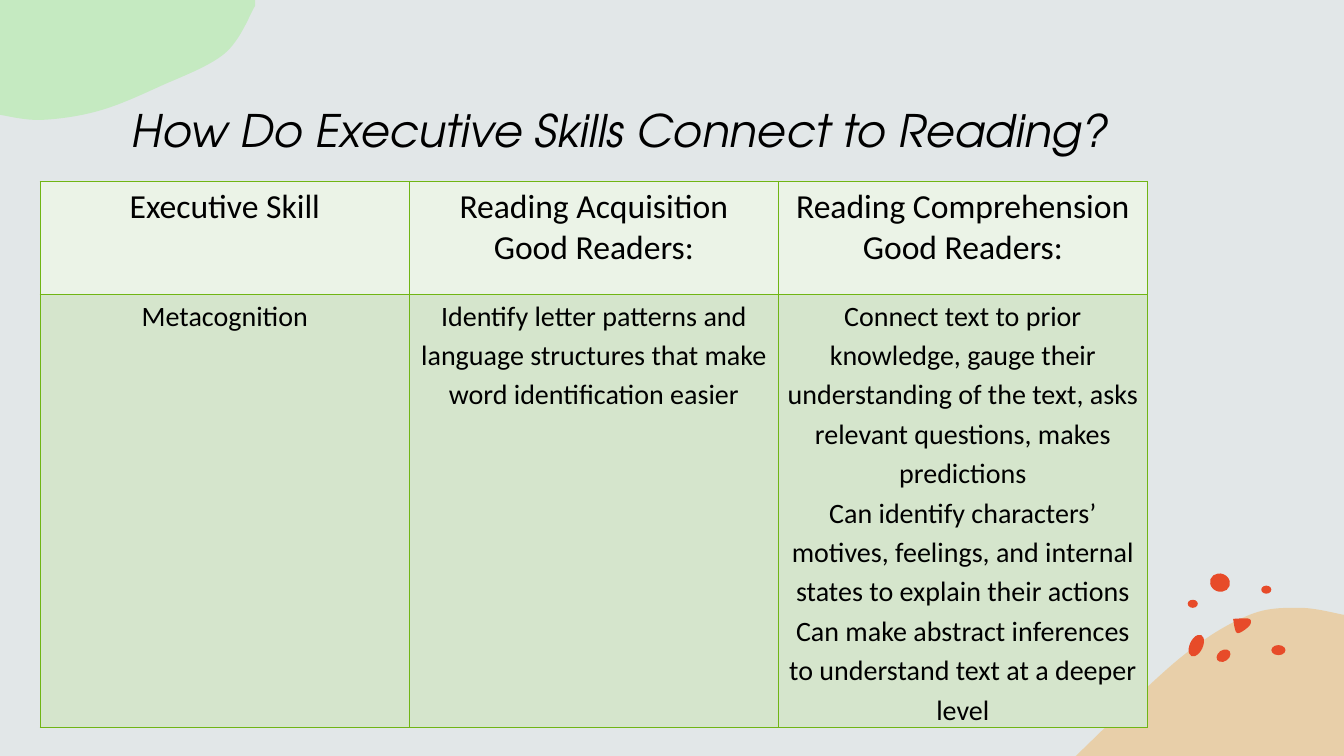
"""Build a slide on how executive skills connect to reading."""
from dataclasses import dataclass

import lxml.etree
import pptx
import pptx.dml.color
import pptx.dml.fill
import pptx.enum.shapes
import pptx.enum.text
import pptx.oxml
import pptx.oxml.ns
import pptx.slide
import pptx.table
import pptx.text.text
import pptx.util
from pptx.util import Inches

Point = tuple[float, float]
CURVE_STEPS = 16
RED = "E74B29"
BORDER = "70B514"


@dataclass
class Blob:
    """A smooth curve through its points, closed by way of straight corners."""
    curve: list[Point]
    corners: list[Point]
    color: str
    opacity: int = 100


@dataclass
class Spot:
    """A small red oval."""
    left: float
    top: float
    width: float
    height: float
    rotation: float = 0


@dataclass
class TableRow:
    """A table row whose cells are lists of paragraphs."""
    height: float
    fill: str
    size: int
    line_spacing: float
    margin_x: float
    margin_y: float
    cells: list[list[str]]


BLOBS = [
    Blob([(10.67, 7.5), (11.69, 6.54), (12.37, 6.11), (12.88, 6.03), (13.33, 6.1)],
         [(13.33, 7.5)], "EFB96B", 50),
    Blob([(2.53, 0.06), (2.23, 0.53), (1.58, 0.86), (0.98, 1.1), (0.41, 1.19), (0, 1.14)],
         [(0, 0), (2.53, 0)], "A9ED9C", 50),
    Blob([(12.23, 6.14), (12.39, 6.14), (12.39, 6.21), (12.27, 6.28), (12.23, 6.14)], [], RED),
]

SPOTS = [
    Spot(12.06, 6.45, 0.15, 0.11, -35),
    Spot(11.8, 6.29, 0.13, 0.23, 25),
    Spot(12.61, 6.4, 0.14, 0.1),
    Spot(12, 5.69, 0.2, 0.18, 20),
    Spot(12.51, 5.81, 0.1, 0.08),
    Spot(11.78, 5.95, 0.1, 0.08),
]

ROWS = [
    TableRow(1.12, "EBF3E7", 24, 1, 0.1, 0.05, [
        ["Executive Skill"],
        ["Reading Acquisition", "Good Readers:"],
        ["Reading Comprehension", "Good Readers:"]]),
    TableRow(4.3, "D5E5CC", 20, 1.15, 0.07, 0, [
        ["Metacognition"],
        ["Identify letter patterns and language structures that make word identification easier"],
        ["Connect text to prior knowledge, gauge their understanding of the text, asks relevant "
         "questions, makes predictions",
         "Can identify characters’ motives, feelings, and internal states to explain their actions",
         "Can make abstract inferences to understand text at a deeper level"]]),
]


def set_fill(fill: pptx.dml.fill.FillFormat, color: str) -> None:
    fill.solid()
    fill.fore_color.rgb = pptx.dml.color.RGBColor.from_string(color)


def write_text(frame: pptx.text.text.TextFrame, paragraphs: list[str], *, size: int,
               font: str = "Calibri", italic: bool = False, line_spacing: float = 1) -> None:
    frame.word_wrap = True
    for index, text in enumerate(paragraphs):
        paragraph = frame.add_paragraph() if index else frame.paragraphs[0]
        paragraph.alignment = pptx.enum.text.PP_ALIGN.CENTER
        paragraph.line_spacing = line_spacing
        run = paragraph.add_run()
        run.text = text
        run.font.name = font
        run.font.size = pptx.util.Pt(size)
        run.font.italic = italic
        set_fill(run.font.fill, "000000")


def smooth(points: list[Point]) -> list[Point]:
    padded = [points[0], *points, points[-1]]
    curve = [points[0]]
    for before, start, end, after in zip(padded, padded[1:], padded[2:], padded[3:]):
        for step in range(1, CURVE_STEPS + 1):
            t = step / CURVE_STEPS
            curve.append(tuple(
                b + t / 2 * (c - a + t * (2 * a - 5 * b + 4 * c - d + t * (3 * (b - c) + d - a)))
                for a, b, c, d in zip(before, start, end, after)))
    return curve


def draw_blob(slide: pptx.slide.Slide, blob: Blob) -> None:
    outline = [(Inches(x), Inches(y)) for x, y in smooth(blob.curve) + blob.corners]
    builder = slide.shapes.build_freeform(*outline[0], scale=1.0)
    builder.add_line_segments(outline[1:], close=True)
    shape = builder.convert_to_shape()
    shape.shadow.inherit = False
    shape.line.fill.background()
    set_fill(shape.fill, blob.color)
    if blob.opacity < 100:
        color = shape.fill._xPr.find(".//" + pptx.oxml.ns.qn("a:srgbClr"))
        lxml.etree.SubElement(color, pptx.oxml.ns.qn("a:alpha"), val=str(blob.opacity * 1000))


def draw_spot(slide: pptx.slide.Slide, spot: Spot) -> None:
    shape = slide.shapes.add_shape(pptx.enum.shapes.MSO_SHAPE.OVAL, Inches(spot.left),
                                   Inches(spot.top), Inches(spot.width), Inches(spot.height))
    shape.rotation = spot.rotation
    shape.shadow.inherit = False
    shape.line.fill.background()
    set_fill(shape.fill, RED)


def set_borders(cell: pptx.table._Cell) -> None:
    properties = cell._tc.get_or_add_tcPr()
    for index, side in enumerate(("lnL", "lnR", "lnT", "lnB")):
        properties.insert(index, pptx.oxml.parse_xml(
            f'<a:{side} {pptx.oxml.ns.nsdecls("a")} w="12700"><a:solidFill>'
            f'<a:srgbClr val="{BORDER}"/></a:solidFill></a:{side}>'))


def draw_table(slide: pptx.slide.Slide, rows: list[TableRow]) -> None:
    height = sum(row.height for row in rows)
    table = slide.shapes.add_table(len(rows), len(rows[0].cells), Inches(0.4), Inches(1.8),
                                   Inches(10.98), Inches(height)).table
    table.first_row = table.horz_banding = False
    for row_index, row in enumerate(rows):
        table.rows[row_index].height = Inches(row.height)
        for column_index, paragraphs in enumerate(row.cells):
            cell = table.cell(row_index, column_index)
            cell.margin_left = cell.margin_right = Inches(row.margin_x)
            cell.margin_top = cell.margin_bottom = Inches(row.margin_y)
            set_fill(cell.fill, row.fill)
            set_borders(cell)
            write_text(cell.text_frame, paragraphs, size=row.size, line_spacing=row.line_spacing)


def main() -> None:
    presentation = pptx.Presentation()
    presentation.slide_width = Inches(13.33)
    presentation.slide_height = Inches(7.5)
    slide = presentation.slides.add_slide(presentation.slide_layouts[6])
    set_fill(slide.background.fill, "E2E7E8")
    for blob in BLOBS:
        draw_blob(slide, blob)
    for spot in SPOTS:
        draw_spot(slide, spot)
    title = slide.shapes.add_textbox(Inches(0.71), Inches(0.65), Inches(10.89), Inches(0.95))
    title.text_frame.vertical_anchor = pptx.enum.text.MSO_ANCHOR.BOTTOM
    write_text(title.text_frame, ["How Do Executive Skills Connect to Reading?"],
               size=32, font="TeX Gyre Adventor", italic=True)
    draw_table(slide, ROWS)
    presentation.save("out.pptx")


if __name__ == "__main__":
    main()
